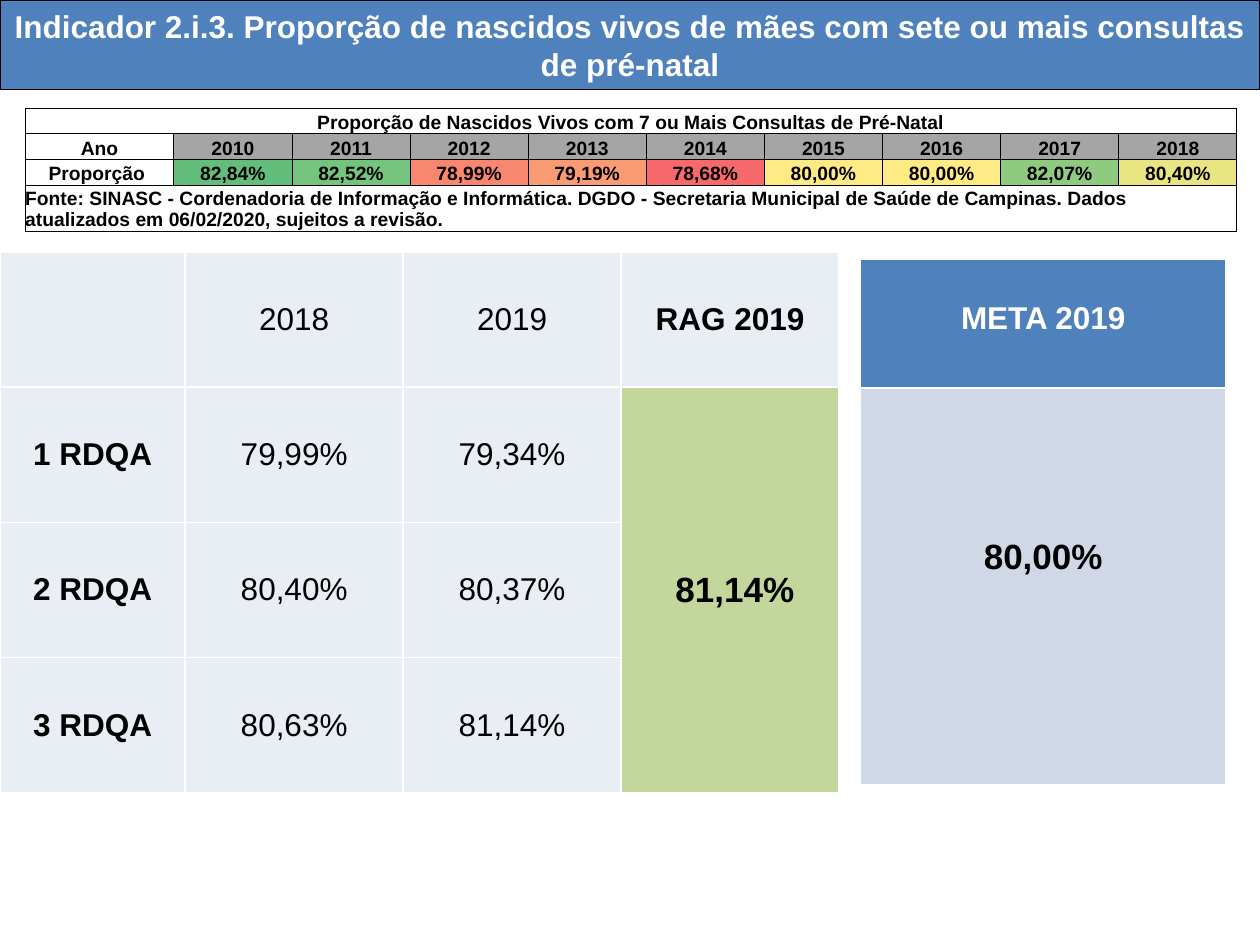
from lxml.etree import SubElement
from pptx import Presentation
from pptx.dml.color import RGBColor
from pptx.enum.text import MSO_ANCHOR, MSO_AUTO_SIZE, PP_ALIGN
from pptx.oxml.ns import qn
from pptx.util import Inches, Pt

BLACK = RGBColor(0x00, 0x00, 0x00)
WHITE = RGBColor(0xFF, 0xFF, 0xFF)
BLUE = RGBColor(0x4F, 0x81, 0xBD)
PALE_BLUE = RGBColor(0xD0, 0xD8, 0xE8)
PALE_GRAY = RGBColor(0xE9, 0xED, 0xF4)
GREEN = RGBColor(0xC3, 0xD6, 0x9B)
GRAY = RGBColor(0xA5, 0xA5, 0xA5)

YEARLY = [
    ("2010", "82,84%", RGBColor(0x63, 0xBE, 0x7B)),
    ("2011", "82,52%", RGBColor(0x75, 0xC4, 0x7D)),
    ("2012", "78,99%", RGBColor(0xF9, 0x87, 0x70)),
    ("2013", "79,19%", RGBColor(0xFA, 0x9B, 0x74)),
    ("2014", "78,68%", RGBColor(0xF8, 0x69, 0x6B)),
    ("2015", "80,00%", RGBColor(0xFF, 0xEB, 0x84)),
    ("2016", "80,00%", RGBColor(0xFF, 0xEB, 0x84)),
    ("2017", "82,07%", RGBColor(0x8E, 0xCB, 0x7E)),
    ("2018", "80,40%", RGBColor(0xEA, 0xE5, 0x83)),
]
QUARTERLY = [
    ("", "2018", "2019", "RAG 2019"),
    ("1 RDQA", "79,99%", "79,34%", " 81,14%"),
    ("2 RDQA", "80,40%", "80,37%", ""),
    ("3 RDQA", "80,63%", "81,14%", ""),
]


class SlideBuilder:
    """Places elements on a grid of 100 columns by 75 rows."""

    font = "Arial"
    columns, rows = 100, 75

    def __init__(self, deck):
        self.column = deck.slide_width / self.columns
        self.row = deck.slide_height / self.rows
        self.slide = deck.slides.add_slide(deck.slide_layouts[5])

    def frame(self, left, top, width, height):
        return (round(left * self.column), round(top * self.row),
                round(width * self.column), round(height * self.row))

    def set_text(self, text_frame, text, size, color, bold, align):
        text_frame.text = text
        paragraph = text_frame.paragraphs[0]
        paragraph.alignment = align
        for target in (paragraph, *paragraph.runs):
            target.font.name = self.font
            target.font.size = Pt(size)
            target.font.bold = bold
            target.font.color.rgb = color

    def title(self, text, height, size):
        title = self.slide.shapes.title
        title.left, title.top, title.width, title.height = self.frame(
            0, 0, self.columns, height)
        title.fill.solid()
        title.fill.fore_color.rgb = BLUE
        title.line.color.rgb = BLACK
        title.line.width = Pt(0.75)
        self.set_text(title.text_frame, text, size, WHITE, True,
                      PP_ALIGN.CENTER)
        title.text_frame.auto_size = MSO_AUTO_SIZE.NONE
        title.text_frame.vertical_anchor = MSO_ANCHOR.MIDDLE

    def table(self, left, top, widths, heights, line_color, line_width):
        """Add an unstyled table whose cells all have the given border."""
        table = self.slide.shapes.add_table(
            len(heights), len(widths),
            *self.frame(left, top, sum(widths), sum(heights))).table
        table.first_row = table.horz_banding = False
        for column, width in zip(table.columns, widths):
            column.width = round(width * self.column)
        for row, height in zip(table.rows, heights):
            row.height = round(height * self.row)
        for cell in table.iter_cells():
            self.border(cell, line_color, line_width)
        return table

    def border(self, cell, color, width):
        properties = cell._tc.get_or_add_tcPr()
        for side in ("lnL", "lnR", "lnT", "lnB"):
            line = SubElement(properties, qn(f"a:{side}"), w=str(Pt(width)))
            fill = SubElement(line, qn("a:solidFill"))
            SubElement(fill, qn("a:srgbClr"), val=str(color))

    def cell(self, cell, text, size, fill=None, color=BLACK, bold=True,
             align=PP_ALIGN.CENTER, anchor=MSO_ANCHOR.MIDDLE, margin_top=0):
        cell.margin_left = cell.margin_right = cell.margin_bottom = 0
        cell.margin_top = Inches(margin_top)
        cell.vertical_anchor = anchor
        if fill is None:
            cell.fill.background()
        else:
            cell.fill.solid()
            cell.fill.fore_color.rgb = fill
        self.set_text(cell.text_frame, text, size, color, bold, align)


def add_quarterly_table(builder):
    table = builder.table(0, 20, [14.7] + [17.3] * 3, [10.73] * 4, WHITE, 1)
    for row, texts in enumerate(QUARTERLY):
        for column, text in enumerate(texts):
            is_result = column == 3 and row > 0
            builder.cell(table.cell(row, column), text,
                         size=20 if is_result else 18,
                         fill=GREEN if is_result else PALE_GRAY,
                         bold=column in (0, 3))
    table.cell(1, 3).merge(table.cell(3, 3))


def add_target_table(builder):
    table = builder.table(68.3, 20.6, [29], [10.2, 31.5], WHITE, 1)
    builder.cell(table.cell(0, 0), "META 2019", 18, BLUE, WHITE,
                 anchor=MSO_ANCHOR.TOP, margin_top=0.33)
    builder.cell(table.cell(1, 0), "80,00%", 20, PALE_BLUE,
                 anchor=MSO_ANCHOR.TOP, margin_top=1.19)


def add_yearly_table(builder):
    label_width, total_width = 11.8, 96.2
    year_width = (total_width - label_width) / len(YEARLY)
    table = builder.table(2, 8.6, [label_width] + [year_width] * len(YEARLY),
                          [2.03] * 3 + [3.65], BLACK, 0.5)
    last = len(YEARLY)
    style = {"size": 11, "anchor": MSO_ANCHOR.BOTTOM}
    for row in (0, 3):
        table.cell(row, 0).merge(table.cell(row, last))
    builder.cell(
        table.cell(0, 0),
        "Proporção de Nascidos Vivos com 7 ou Mais Consultas de Pré-Natal",
        **style)
    builder.cell(table.cell(1, 0), "Ano", **style)
    builder.cell(table.cell(2, 0), "Proporção ", **style)
    for column, (year, share, color) in enumerate(YEARLY, start=1):
        builder.cell(table.cell(1, column), year, fill=GRAY, **style)
        builder.cell(table.cell(2, column), share, fill=color, **style)
    builder.cell(
        table.cell(3, 0),
        "Fonte: SINASC - Cordenadoria de Informação e Informática. DGDO - "
        "Secretaria Municipal de Saúde de Campinas. Dados atualizados em "
        "06/02/2020, sujeitos a revisão.",
        align=PP_ALIGN.LEFT, **style)


def main():
    deck = Presentation()
    deck.slide_width, deck.slide_height = Inches(10), Inches(7.5)
    builder = SlideBuilder(deck)
    builder.title("Indicador 2.i.3. Proporção de nascidos vivos de mães com "
                  "sete ou mais consultas de pré-natal", height=7.1, size=18)
    add_quarterly_table(builder)
    add_target_table(builder)
    add_yearly_table(builder)
    deck.save("out.pptx")


if __name__ == "__main__":
    main()
